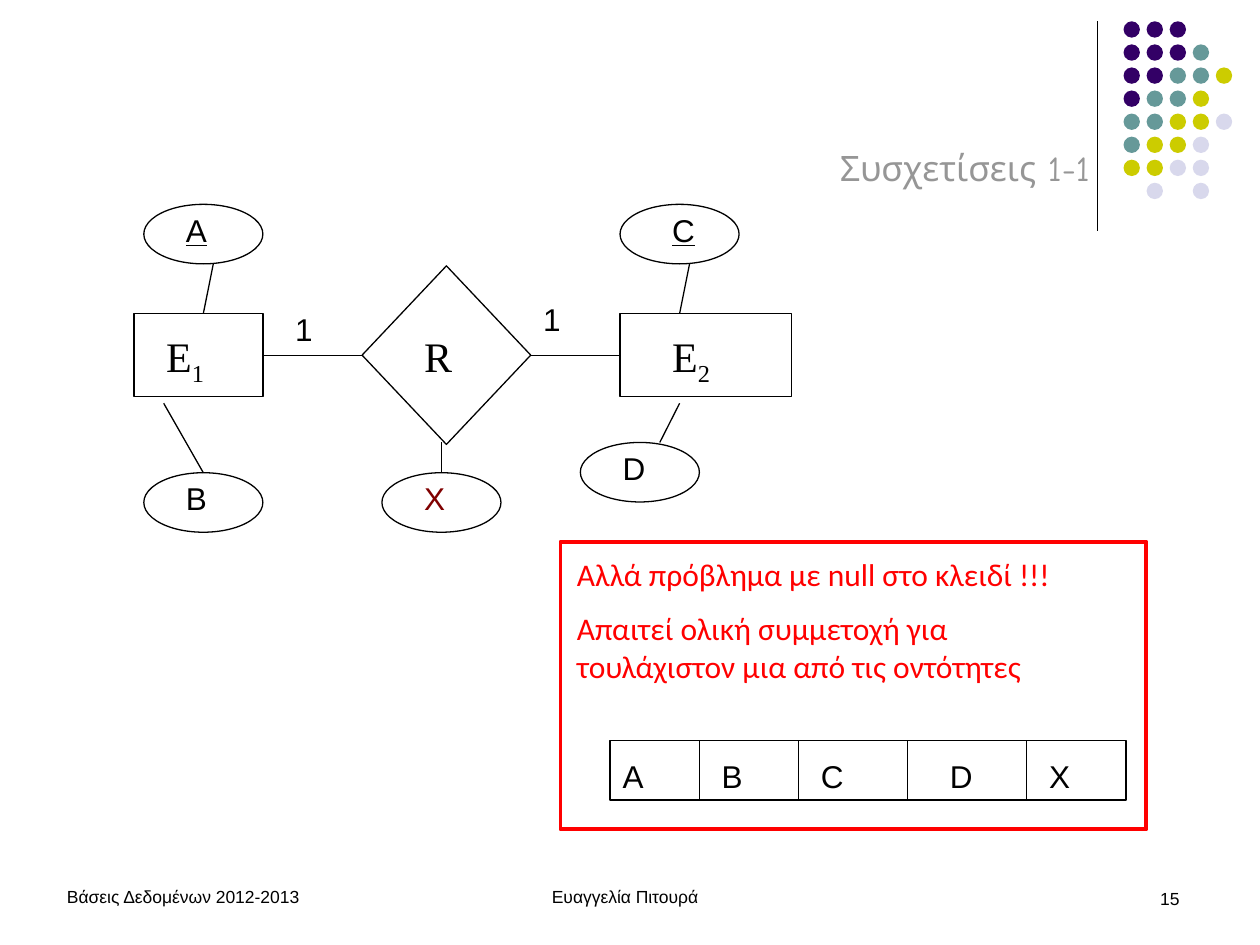
from dataclasses import dataclass

import pptx
import pptx.dml.color
import pptx.enum.shapes
import pptx.enum.text
import pptx.util
from pptx.oxml.xmlchemy import OxmlElement

Cm = pptx.util.Cm
Pt = pptx.util.Pt
Kind = pptx.enum.shapes.MSO_SHAPE
Align = pptx.enum.text.PP_ALIGN
Anchor = pptx.enum.text.MSO_ANCHOR

COLORS = {
    "black": "000000", "red": "FF0000", "maroon": "800000", "gray": "969696",
    "P": "330066", "T": "669999", "Y": "CCCC00", "L": "D8D8EC",
}


# All lengths in the records are centimetres
@dataclass
class Box:
    kind: int
    x: float
    y: float
    w: float
    h: float
    color: str = "black"
    weight: float = 0.75


@dataclass
class Field:
    """An attribute oval with its name."""
    name: str
    x: float
    y: float
    width: float
    shift: float = 0.6
    key: bool = False
    color: str = "black"


@dataclass
class Part:
    """An entity or relation name, with an optional subscript."""
    name: str
    index: str
    x: float
    width: float


def paint(name: str) -> pptx.dml.color.RGBColor:
    return pptx.dml.color.RGBColor.from_string(COLORS[name])


def draw_box(shapes, box: Box):
    shape = shapes.add_shape(box.kind, Cm(box.x), Cm(box.y), Cm(box.w), Cm(box.h))
    shape.shadow.inherit = False
    shape.fill.background()
    shape.line.color.rgb = paint(box.color)
    shape.line.width = Pt(box.weight)
    return shape


def draw_line(shapes, x1: float, y1: float, x2: float, y2: float):
    line = shapes.add_connector(
        pptx.enum.shapes.MSO_CONNECTOR.STRAIGHT, Cm(x1), Cm(y1), Cm(x2), Cm(y2))
    line.line.color.rgb = paint("black")
    line.line.width = Pt(0.75)
    line._element.spPr.append(OxmlElement("a:effectLst"))
    return line


def join(shapes, left, right) -> None:
    """Link the right side of one shape to the left side of the next."""
    line = draw_line(shapes, 0, 0, 1, 1)
    line.begin_connect(left, 3)
    line.end_connect(right, 1)


def write(shapes, text: str, x: float, y: float, w: float, h: float = 1.02, *,
          size: float = 18, font: str = "Arial", color: str = "black",
          align=Align.LEFT, anchor=Anchor.TOP, under: bool = False,
          sub: str = "", gap: float = 0) -> None:
    frame = shapes.add_textbox(Cm(x), Cm(y), Cm(w), Cm(h)).text_frame
    frame.word_wrap = True
    frame.vertical_anchor = anchor
    for i, words in enumerate(text.split("\n")):
        para = frame.add_paragraph() if i else frame.paragraphs[0]
        para.alignment = align
        if i:
            para.space_before = Pt(gap)
        for piece in filter(None, (words, sub)):
            run = para.add_run()
            run.text = piece
            run.font.size = Pt(size)
            run.font.name = font
            run.font.color.rgb = paint(color)
            if under:
                run.font.underline = True
        if sub:
            run.font._element.set("baseline", "-25000")


def draw_dots(shapes) -> None:
    rows = ("PPP", "PPPT", "PPTTY", "PTTY", "TTYYL", "TYYL", "YYLL", " L L")
    left, top, step, size = 22.65, 0.43, 0.465, 0.33
    group = shapes.add_group_shape()
    for r, row in enumerate(rows):
        for c, code in enumerate(row):
            if code == " ":
                continue
            dot = draw_box(group.shapes, Box(
                Kind.OVAL, left + c * step, top + r * step, size, size))
            dot.fill.solid()
            dot.fill.fore_color.rgb = paint(code)
            dot.line.fill.background()


def draw_field(shapes, field: Field) -> None:
    draw_box(shapes, Box(Kind.OVAL, field.x, field.y, 2.4, 1.2))
    write(shapes, field.name, field.x + field.shift, field.y, field.width,
          under=field.key, color=field.color)


def main() -> None:
    deck = pptx.Presentation()
    deck.slide_width, deck.slide_height = Cm(25.4), Cm(19.05)
    shapes = deck.slides.add_slide(deck.slide_layouts[6]).shapes

    # Corner dots, footer and title
    draw_line(shapes, 22.12, 0.43, 22.12, 4.65)
    draw_dots(shapes)
    write(shapes, "Βάσεις Δεδομένων 2012-2013", 1.1, 17.73, 6.6, 0.8, size=10)
    write(shapes, "Ευαγγελία Πιτουρά", 8.5, 17.73, 8.2, 0.55, size=10,
          align=Align.CENTER)
    write(shapes, "15", 18.1, 17.78, 5.93, 1.27, size=10, align=Align.RIGHT)
    write(shapes, "Συσχετίσεις 1-1", 1.27, 1.55, 20.95, 2.38, size=20,
          font="Comic Neue", color="gray", align=Align.RIGHT, anchor=Anchor.BOTTOM)

    # Entities and relation, centred on one axis
    first = draw_box(shapes, Box(Kind.FLOWCHART_PROCESS, 2.7, 6.32, 2.6, 1.68))
    link = draw_box(shapes, Box(Kind.FLOWCHART_DECISION, 7.3, 5.36, 3.4, 3.6))
    second = draw_box(shapes, Box(Kind.FLOWCHART_PROCESS, 12.5, 6.32, 3.46, 1.68))
    join(shapes, first, link)
    join(shapes, link, second)
    for part in (Part("E", "1", 3.1, 2.4), Part("R", "", 8.3, 3.6),
                 Part("E", "2", 13.3, 2.8)):
        write(shapes, part.name, part.x, 6.53, part.width, 1.27, size=24,
              font="Times New Roman", sub=part.index)
    write(shapes, "1", 5.7, 6.12, 1.6)
    write(shapes, "1", 10.7, 5.92, 1.2)

    # Attributes and their lines
    for field in (
        Field("A", 2.9, 4.12, 2, key=True),
        Field("B", 2.9, 9.53, 1.4),
        Field("C", 12.5, 4.12, 1.8, shift=0.8, key=True),
        Field("D", 11.7, 8.92, 1.8),
        Field("X", 7.7, 9.53, 1.6, color="maroon"),
    ):
        draw_field(shapes, field)
    for ends in ((4.3, 5.32, 4.1, 6.32), (3.3, 8.13, 4.1, 9.53),
                 (13.9, 5.32, 13.7, 6.32), (13.7, 8.13, 13.3, 8.92),
                 (8.9, 8.92, 8.9, 9.53)):
        draw_line(shapes, *ends)

    # Relation schema strip
    top, high = 14.93, 1.2
    draw_box(shapes, Box(Kind.RECTANGLE, 12.3, top, 10.4, high))
    for name, x, width in (("A", 12.3, 1), ("B", 14.3, 2.2), ("C", 16.3, 1.6),
                           ("D", 18.9, 1.4), ("X", 20.9, 1.4)):
        write(shapes, name, x, top + 0.2, width)
    for x in (14.1, 16.1, 18.3, 20.7):
        draw_line(shapes, x, top, x, top + high)

    # Remark in its red frame
    write(shapes, "Αλλά πρόβλημα με null στο κλειδί !!!\n"
          "Απαιτεί ολική συμμετοχή για τουλάχιστον μια από τις οντότητες",
          11.38, 11.07, 11.25, 2.92, font="Calibri", color="red", gap=9)
    draw_box(shapes, Box(Kind.RECTANGLE, 11.3, 10.92, 11.81, 5.8, "red", 2.25))

    deck.save("out.pptx")


if __name__ == "__main__":
    main()
